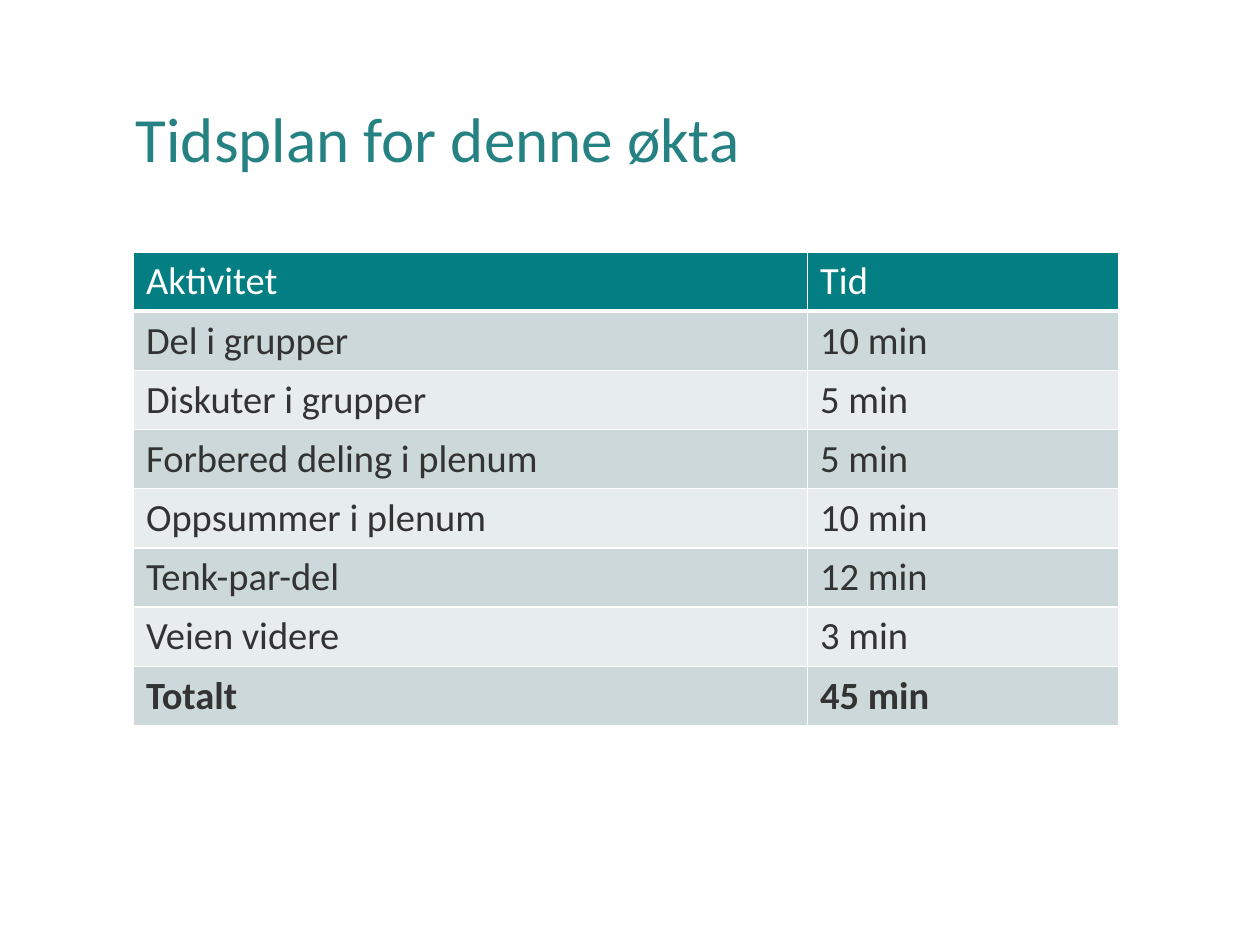
"""Build a slide with the timetable for a group session."""
from dataclasses import dataclass

from lxml import etree
from pptx import Presentation
from pptx import util as u
from pptx.dml.color import RGBColor
from pptx.enum import text
from pptx.oxml import ns

FONT = "Calibri"
TITLE_TEAL = RGBColor(0x26, 0x81, 0x83)
HEADER_TEAL = RGBColor(0x03, 0x7F, 0x83)
BAND_DARK = RGBColor(0xCC, 0xD8, 0xD9)
BAND_LIGHT = RGBColor(0xE7, 0xEC, 0xED)
INK = RGBColor(0x33, 0x33, 0x33)
WHITE = RGBColor(0xFF, 0xFF, 0xFF)
COLUMN_WIDTHS = (5.35, 2.47)
ROW_HEIGHT = 0.47


@dataclass(frozen=True)
class Activity:
    name: str
    time: str
    bold: bool = False


HEADER = Activity("Aktivitet", "Tid")
ACTIVITIES = (
    Activity("Del i grupper", "10 min"),
    Activity("Diskuter i grupper", "5 min"),
    Activity("Forbered deling i plenum", "5 min"),
    Activity("Oppsummer i plenum", "10 min"),
    Activity("Tenk-par-del", "12 min"),
    Activity("Veien videre", "3 min"),
    Activity("Totalt", "45 min", bold=True),
)


def style_paragraph(para, size: float, color: RGBColor, bold: bool = False) -> None:
    para.font.name = FONT
    para.font.size = u.Pt(size)
    para.font.color.rgb = color
    para.font.bold = bold


def add_title(slide, wording: str) -> None:
    box = slide.shapes.add_textbox(u.Inches(0.98), u.Inches(0.4), u.Inches(8.29), u.Inches(1.45))
    frame = box.text_frame
    frame.word_wrap = True
    frame.vertical_anchor = text.MSO_ANCHOR.MIDDLE
    frame.margin_left = frame.margin_right = u.Inches(0.1)
    frame.margin_top = frame.margin_bottom = u.Inches(0.1)
    para = frame.paragraphs[0]
    para.text = wording
    para.line_spacing = 0.9
    style_paragraph(para, 36, TITLE_TEAL)


def add_borders(cell, bottom: float) -> None:
    properties = cell._tc.get_or_add_tcPr()
    for side, width in (("L", 1), ("R", 1), ("T", 1), ("B", bottom)):
        line = etree.SubElement(properties, ns.qn(f"a:ln{side}"), w=str(u.Pt(width)))
        fill = etree.SubElement(line, ns.qn("a:solidFill"))
        etree.SubElement(fill, ns.qn("a:srgbClr"), val=str(WHITE))


def fill_row(cells, activity: Activity, fill: RGBColor, ink: RGBColor, bottom: float) -> None:
    for cell, wording in zip(cells, (activity.name, activity.time)):
        add_borders(cell, bottom)
        cell.fill.solid()
        cell.fill.fore_color.rgb = fill
        cell.text = wording
        style_paragraph(cell.text_frame.paragraphs[0], 22, ink, activity.bold)


def add_timetable(slide) -> None:
    count = len(ACTIVITIES) + 1
    table = slide.shapes.add_table(
        count, len(COLUMN_WIDTHS), u.Inches(1.06), u.Inches(2),
        u.Inches(sum(COLUMN_WIDTHS)), u.Inches(count * ROW_HEIGHT),
    ).table
    for column, width in zip(table.columns, COLUMN_WIDTHS):
        column.width = u.Inches(width)
    header, *body = table.rows
    fill_row(header.cells, HEADER, HEADER_TEAL, WHITE, bottom=3)
    for index, (row, activity) in enumerate(zip(body, ACTIVITIES)):
        band = BAND_LIGHT if index % 2 else BAND_DARK
        fill_row(row.cells, activity, band, INK, bottom=1)


def main() -> None:
    deck = Presentation()
    deck.slide_width, deck.slide_height = u.Inches(10), u.Inches(7.5)
    slide = deck.slides.add_slide(deck.slide_layouts[6])
    add_title(slide, "Tidsplan for denne økta")
    add_timetable(slide)
    deck.save("out.pptx")


if __name__ == "__main__":
    main()
